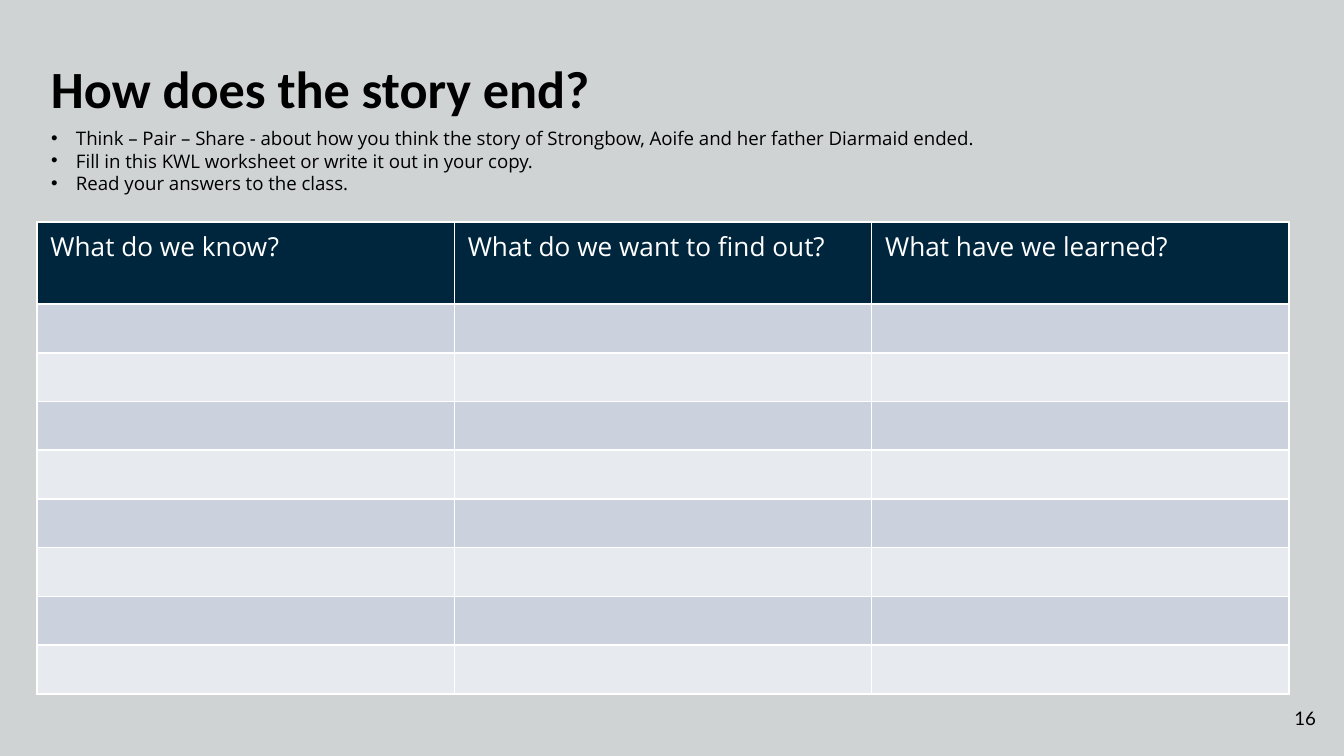
from lxml import etree
from pptx import Presentation
from pptx.dml.color import RGBColor
from pptx.enum.text import MSO_ANCHOR, PP_ALIGN
from pptx.oxml.ns import qn
from pptx.util import Pt

MIDDLE = MSO_ANCHOR.MIDDLE
LEFT, RIGHT = PP_ALIGN.LEFT, PP_ALIGN.RIGHT
WIDTH, HEIGHT = 1344, 756
SCALE = 9144000 / WIDTH
COLORS = {
    "back": "D0D3D4",
    "ink": "000000",
    "white": "FFFFFF",
    "head": "00263E",
    "odd": "CCD1DE",
    "even": "E7EAEF",
}
TASKS = [
    "Think – Pair – Share - about how you think the story of Strongbow, "
    "Aoife and her father Diarmaid ended.",
    "Fill in this KWL worksheet or write it out in your copy.",
    "Read your answers to the class.",
]
HEADS = ["What do we know?", "What do we want to find out?", "What have we learned?"]


def px(size):
    """Turn px into EMU."""
    return round(size * SCALE)


def rgb(name):
    """Look up a colour by name."""
    return RGBColor.from_string(COLORS[name])


def style(para, font, size, color="ink", bold=False):
    """Format every run of a paragraph."""
    for run in para.runs:
        run.font.name = font
        run.font.size = Pt(size)
        run.font.bold = bold
        run.font.color.rgb = rgb(color)


def add_text(slide, box, inset=13):
    """Add a wrapping text box and return its frame."""
    frame = slide.shapes.add_textbox(*map(px, box)).text_frame
    frame.word_wrap = True
    frame.margin_left = frame.margin_right = px(13)
    frame.margin_top = frame.margin_bottom = px(inset)
    return frame


def add_label(slide, box, text, font, size, bold=False, align=LEFT):
    """Add one line of text."""
    frame = add_text(slide, box)
    frame.text = text
    para = frame.paragraphs[0]
    para.alignment = align
    style(para, font, size, bold=bold)
    return frame


def add_tasks(slide, box):
    """Add the bulleted tasks."""
    frame = add_text(slide, box, 7)
    frame.text = "\n".join(TASKS)
    for para in frame.paragraphs:
        props = para._p.get_or_add_pPr()
        props.set("marL", str(px(25)))
        props.set("indent", str(-px(25)))
        etree.SubElement(props, qn("a:buFont"), typeface="Arial")
        etree.SubElement(props, qn("a:buChar"), char="•")
        style(para, "Open Sans", 10)


def paint(cell, color):
    """Give a cell white borders and a fill."""
    props = cell._tc.get_or_add_tcPr()
    for side in "LRTB":
        line = etree.SubElement(props, qn(f"a:ln{side}"), w=str(Pt(1)))
        fill = etree.SubElement(line, qn("a:solidFill"))
        etree.SubElement(fill, qn("a:srgbClr"), val=COLORS["white"])
    cell.fill.solid()
    cell.fill.fore_color.rgb = rgb(color)


def add_grid(slide, box, head=82, count=8):
    """Add the worksheet with a heading row and blank rows."""
    width, height = box[2:]
    shape = slide.shapes.add_table(count + 1, len(HEADS), *map(px, box))
    table = shape.table
    for col in table.columns:
        col.width = px(width / len(HEADS))
    for index, row in enumerate(table.rows):
        row.height = px((height - head) / count if index else head)
        color = ("even", "odd")[index % 2] if index else "head"
        for cell, text in zip(row.cells, HEADS):
            paint(cell, color)
            if index:
                cell.margin_top = cell.margin_bottom = 0
            else:
                cell.text_frame.text = text
                style(cell.text_frame.paragraphs[0], "Open Sans", 14, "white")


def main():
    """Build and save the slide."""
    deck = Presentation()
    deck.slide_width, deck.slide_height = px(WIDTH), px(HEIGHT)
    slide = deck.slides.add_slide(deck.slide_layouts[6])
    slide.background.fill.solid()
    slide.background.fill.fore_color.rgb = rgb("back")
    add_label(slide, (38, 43, 590, 90), "How does the story end?", "Calibri", 28, True)
    page = add_label(slide, (1249, 689, 80, 58), "16", "Lato", 10, align=RIGHT)
    page.vertical_anchor = MIDDLE
    add_tasks(slide, (38, 120, 1083, 136))
    add_grid(slide, (37, 222, 1252, 472))
    deck.save("out.pptx")


if __name__ == "__main__":
    main()
